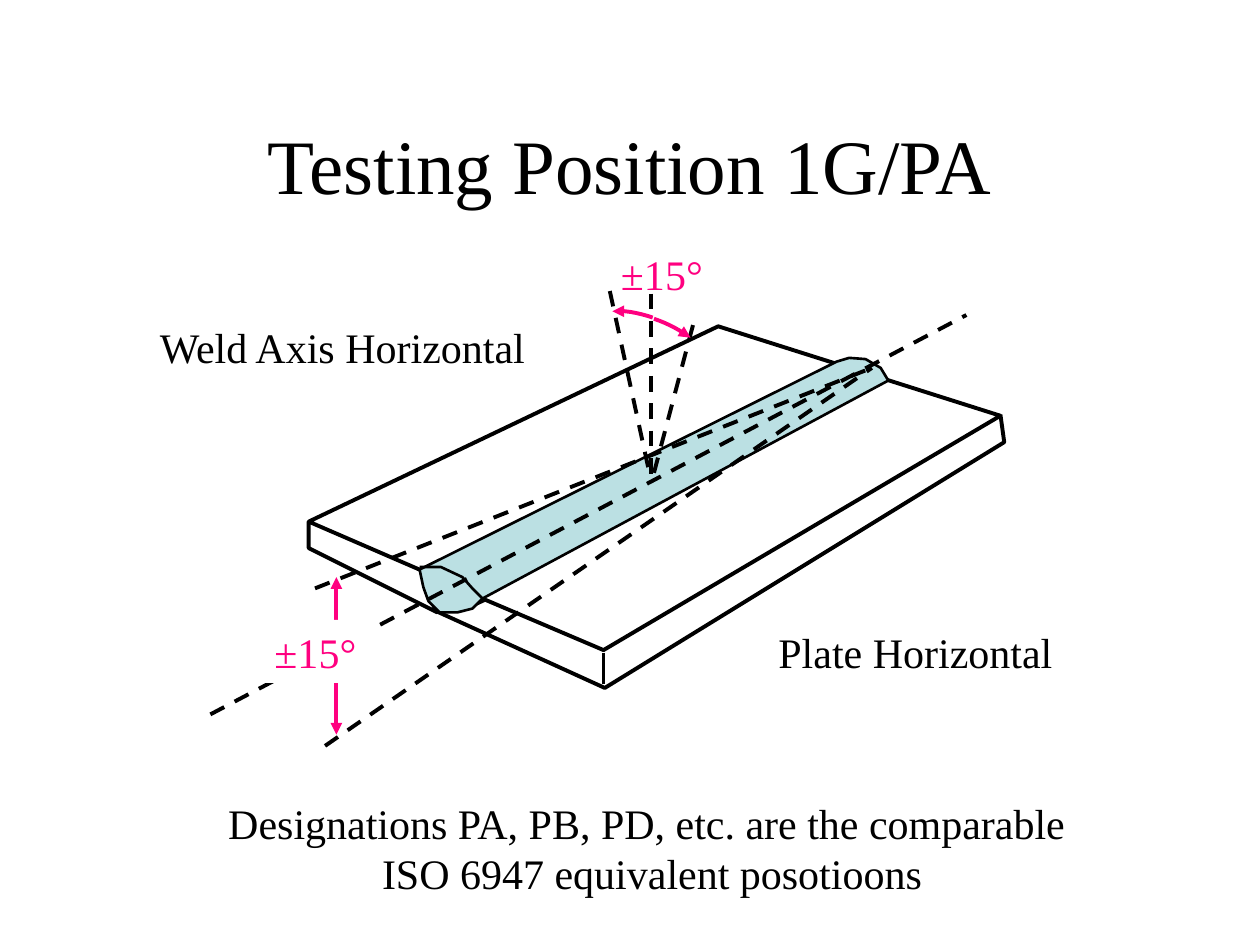
"""Build the slide that shows welding test position 1G/PA."""
import lxml.etree
import pptx
import pptx.dml.color
import pptx.enum.dml
import pptx.enum.shapes
import pptx.enum.text
import pptx.oxml.ns
import pptx.util

Inches = pptx.util.Inches
Align = pptx.enum.text.PP_ALIGN
Anchor = pptx.enum.text.MSO_ANCHOR
BLACK = pptx.dml.color.RGBColor(0x00, 0x00, 0x00)
WHITE = pptx.dml.color.RGBColor(0xFF, 0xFF, 0xFF)
PINK = pptx.dml.color.RGBColor(0xFF, 0x00, 0x80)
BLUE = pptx.dml.color.RGBColor(0xBB, 0xE0, 0xE3)
FONT = "Times New Roman"
DASH = pptx.enum.dml.MSO_LINE.DASH

PLATE = [(7.94, 3.29), (7.97, 3.51), (4.8, 5.46), (3.46, 4.85), (3.72, 4.82),
         (3.85, 4.76), (4.79, 5.16), (7.94, 3.3), (5.7, 2.59), (2.45, 4.14),
         (3.35, 4.53), (3.38, 4.69), (3.47, 4.86), (2.45, 4.35), (2.45, 4.14)]
WELD = [(6.64, 2.87), (6.74, 2.84), (6.87, 2.85), (6.99, 2.92), (7.05, 3.02),
        (3.83, 4.75), (3.75, 4.83), (3.63, 4.86), (3.49, 4.86), (3.4, 4.77),
        (3.36, 4.66), (3.33, 4.52)]
EDGE = [(3.33, 4.5), (3.5, 4.5), (3.67, 4.58), (3.75, 4.67), (3.83, 4.75)]
AXES = [((2.58, 5.92), (6.92, 2.92)), ((2.5, 4.67), (6.92, 2.92)),
        ((1.67, 5.67), (7.67, 2.5))]
TILTS = [((5.17, 2.33), (5.17, 3.83)), ((4.84, 2.31), (5.16, 3.78)),
         ((5.5, 2.58), (5.17, 3.83))]
ARCS = [[(5.19, 2.53), (5.31, 2.57), (5.41, 2.63), (5.48, 2.68)],
        [(5.18, 2.52), (5.06, 2.48), (4.94, 2.46), (4.86, 2.47)]]


def assign(item, values):
    """Set each named value on the item."""
    for name, value in values.items():
        setattr(item, name, value)


def add_tag(parent, name, **values):
    """Append a drawing element to the parent."""
    lxml.etree.SubElement(parent, pptx.oxml.ns.qn("a:" + name), values)


def stroke(shape, color, width, dash=None, ends=()):
    """Style the line of a shape and add its arrowheads."""
    shape.line.color.rgb = color
    assign(shape.line, {"width": pptx.util.Pt(width), "dash_style": dash})
    for end in ends:
        add_tag(shape._element.spPr.get_or_add_ln(), end, type="triangle")


def add_line(slide, start, end, color=BLACK, width=2.25, **style):
    """Draw a straight line between two points."""
    kind = pptx.enum.shapes.MSO_CONNECTOR.STRAIGHT
    line = slide.shapes.add_connector(kind, *map(Inches, start + end))
    stroke(line, color, width, **style)
    add_tag(line._element.spPr, "effectLst")


def add_path(slide, points, color=BLACK, width=2.25, fill=None, **style):
    """Draw an outline, closed and filled if a fill is given."""
    first, *rest = [tuple(map(Inches, point)) for point in points]
    maker = slide.shapes.build_freeform(*first)
    maker.add_line_segments(rest, close=fill is not None)
    shape = maker.convert_to_shape()
    shape.shadow.inherit = False
    if fill is None:
        shape.fill.background()
    else:
        shape.fill.solid()
        shape.fill.fore_color.rgb = fill
    stroke(shape, color, width, **style)


def curve(knots, steps=8):
    """Return points along a cubic curve."""
    points = []
    for step in range(steps + 1):
        t = step / steps
        parts = ((1 - t) ** 3, 3 * t * (1 - t) ** 2, 3 * t * t * (1 - t), t ** 3)
        points.append(tuple(sum(p * k for p, k in zip(parts, axis))
                            for axis in zip(*knots)))
    return points


def add_text(slide, place, lines, color=BLACK, size=24, align=Align.LEFT,
             anchor=Anchor.TOP, wrap=True, fill=None):
    """Place lines of text in a box."""
    box = slide.shapes.add_textbox(*map(Inches, place))
    if fill is not None:
        box.fill.solid()
        box.fill.fore_color.rgb = fill
    frame = box.text_frame
    assign(frame, {"word_wrap": wrap, "vertical_anchor": anchor,
                   "text": "\n".join(lines)})
    for para in frame.paragraphs:
        para.alignment = align
        for run in para.runs:
            assign(run.font, {"name": FONT, "size": pptx.util.Pt(size)})
            run.font.color.rgb = color


def main():
    """Build and save the slide."""
    deck = pptx.Presentation()
    assign(deck, {"slide_width": Inches(10), "slide_height": Inches(7.5)})
    slide = deck.slides.add_slide(deck.slide_layouts[6])

    add_text(slide, (0.75, 0.67, 8.5, 1.25), ["Testing Position 1G/PA"],
             size=44, align=Align.CENTER, anchor=Anchor.MIDDLE)
    add_line(slide, (2.67, 4.58), (2.67, 5.83), PINK, ends=("headEnd", "tailEnd"))
    add_path(slide, PLATE)
    add_line(slide, (4.79, 5.18), (4.79, 5.43), width=1.5)
    add_path(slide, WELD, width=1.5, fill=BLUE)
    add_path(slide, EDGE, width=1.5)
    for start, end in AXES:
        add_line(slide, start, end, dash=DASH)
    add_text(slide, (2.08, 4.92, 0.92, 0.5), ["±15°"], PINK, fill=WHITE)
    add_text(slide, (1.17, 2.5, 3.33, 0.5), ["Weld Axis Horizontal"])
    add_text(slide, (6.08, 4.92, 3.33, 0.5), ["Plate Horizontal"])
    for start, end in TILTS:
        add_line(slide, start, end, dash=DASH)
    add_text(slide, (4.83, 1.92, 0.92, 0.5), ["±15°"], PINK)
    for knots in ARCS:
        add_path(slide, curve(knots), PINK, ends=("tailEnd",))
    add_text(slide, (1.68, 6.28, 6.99, 0.91),
             ["Designations PA, PB, PD, etc. are the comparable ",
              "ISO 6947 equivalent posotioons"], align=Align.CENTER, wrap=False)
    deck.save("out.pptx")


if __name__ == "__main__":
    main()
